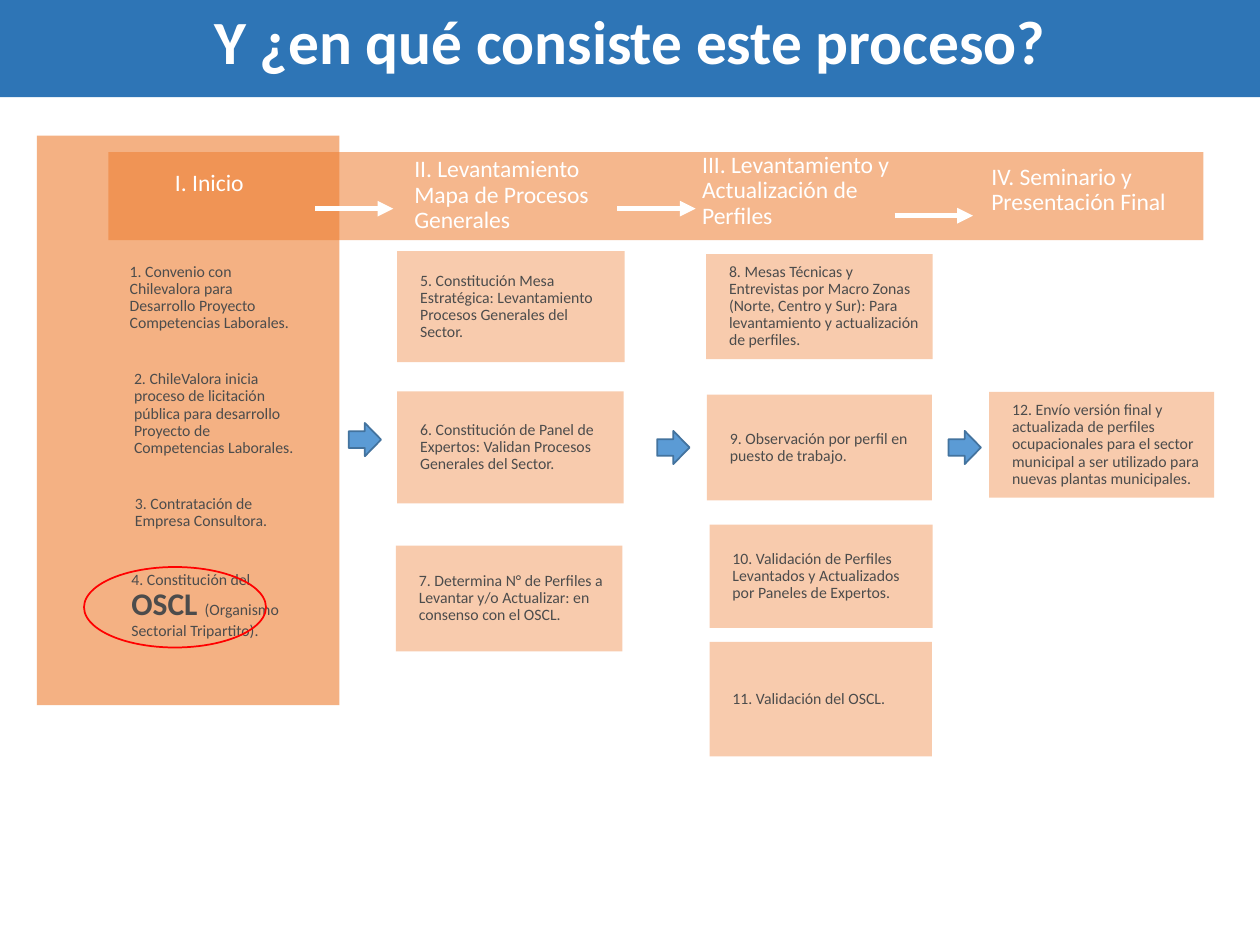
from lxml import etree
from pptx import Presentation
from pptx.dml.color import RGBColor
from pptx.enum.shapes import MSO_CONNECTOR, MSO_SHAPE
from pptx.enum.text import MSO_ANCHOR, MSO_AUTO_SIZE, PP_ALIGN
from pptx.oxml.ns import qn
from pptx.util import Pt

RECTANGLE, ARROW, ELLIPSE = MSO_SHAPE.RECTANGLE, MSO_SHAPE.RIGHT_ARROW, MSO_SHAPE.OVAL
STRAIGHT = MSO_CONNECTOR.STRAIGHT
TOP, MIDDLE = MSO_ANCHOR.TOP, MSO_ANCHOR.MIDDLE
LEFT, CENTER = PP_ALIGN.LEFT, PP_ALIGN.CENTER
NO_FIT = MSO_AUTO_SIZE.NONE

COLORS = {
    "title": "2E75B6", "panel": "F4B183", "band": "ED7D31", "step": "F8CBAD",
    "arrow": "5B9BD5", "arrow_line": "43739E", "mark": "FF0000",
    "white": "FFFFFF", "text": "4C4C4C",
}

# Content: every place is left, top, width, height in points
TITLE = "Y ¿en qué consiste este proceso?"
PHASES = [
    ("I. Inicio", (100, 98, 92, 14.5)),
    ("II. Levantamiento Mapa de Procesos Generales", (236.75, 90, 105, 44)),
    ("III. Levantamiento y Actualización de Perfiles", (401.25, 87.25, 108, 44)),
    ("IV. Seminario y Presentación Final", (566.5, 94.25, 118, 29.5)),
]
START_SIZE = (114.5, 38)
START_STEPS = [
    ("1. Convenio con Chilevalora para Desarrollo Proyecto Competencias Laborales.",
     (61, 151.25)),
    ("2. ChileValora inicia proceso de licitación pública para desarrollo "
     "Proyecto de Competencias Laborales.", (63.5, 217.5)),
    ("3. Contratación de Empresa Consultora.", (64, 274.25)),
    ([("4. Constitución del ", {}),
      ("OSCL ", {"size": Pt(18), "bold": True}),
      ("(Organismo Sectorial Tripartito).", {})], (62, 327)),
]
BOXED_STEPS = [
    ("5. Constitución Mesa Estratégica: Levantamiento Procesos Generales del Sector.",
     (227, 143.5, 130, 63.5)),
    ("6. Constitución de Panel de Expertos: Validan Procesos Generales del Sector.",
     (227, 223.75, 129.5, 64)),
    ("7. Determina N° de Perfiles a Levantar y/o Actualizar: en consenso con el OSCL.",
     (226.25, 311.75, 129.5, 60.5)),
    ("8. Mesas Técnicas y Entrevistas por Macro Zonas (Norte, Centro y Sur): Para "
     "levantamiento y actualización de perfiles.", (403.5, 145.25, 129.5, 60)),
    ("9. Observación por perfil en puesto de trabajo.", (404, 225.5, 128.5, 60.5)),
    ("10. Validación de Perfiles Levantados y Actualizados por Paneles de Expertos.",
     (405.5, 299.75, 127.5, 59)),
    ("11. Validación del OSCL.", (405.5, 366.75, 127, 65.5)),
    ("12. Envío versión final y actualizada de perfiles ocupacionales para el sector "
     "municipal a ser utilizado para nuevas plantas municipales.",
     (565.25, 224, 128.5, 60.5)),
]
PHASE_LINES = [(180, 119.25), (352.75, 119.25), (511.25, 123.25)]
LINE_LENGTH = 44.75
BLOCK_ARROWS = [(199.25, 241.75), (375.5, 246.25), (542, 246.25)]
ARROW_SIZE = (18.5, 19)


def color(name):
    return RGBColor.from_string(COLORS[name])


def place(values):
    return [Pt(value) for value in values]


def write(box, text, size, ink, anchor=MIDDLE, align=LEFT, indent=0, inset=None, bold=False):
    frame = box.text_frame
    settings = {"word_wrap": True, "auto_size": NO_FIT, "vertical_anchor": anchor}
    if inset is not None:
        for side in ("left", "top", "right", "bottom"):
            settings["margin_" + side] = Pt(inset)
    for name, value in settings.items():
        setattr(frame, name, value)
    para = frame.paragraphs[0]
    para.alignment, para.line_spacing, para.space_before = align, 0.9, Pt(0)
    if indent:
        properties = para._p.get_or_add_pPr()
        properties.set("marL", str(Pt(indent)))
        properties.set("indent", "0")
    for words, changes in [(text, {})] if isinstance(text, str) else text:
        span = para.add_run()
        span.text = words
        span.font.color.rgb = color(ink)
        font = {"name": "Calibri", "size": Pt(size), "bold": bold, **changes}
        for name, value in font.items():
            setattr(span.font, name, value)


def add_shape(page, kind, where, fill=None, line=None):
    shape = page.shapes.add_shape(kind, *place(where))
    shape.shadow.inherit = False
    if fill:
        shape.fill.solid()
        shape.fill.fore_color.rgb = color(fill)
    else:
        shape.fill.background()
    if line:
        shape.line.color.rgb = color(line)
        shape.line.width = Pt(1)
    else:
        shape.line.fill.background()
    return shape


def add_phase_line(page, left, top):
    line = page.shapes.add_connector(STRAIGHT, *place((left, top, left + LINE_LENGTH, top)))
    line.line.color.rgb = color("white")
    line.line.width = Pt(3)
    etree.SubElement(line.line._get_or_add_ln(), qn("a:tailEnd"), type="triangle")
    etree.SubElement(line._element.spPr, qn("a:effectLst"))


def main():
    deck = Presentation()
    deck.slide_width, deck.slide_height = Pt(720), Pt(540)
    page = deck.slides.add_slide(deck.slide_layouts[5])

    # Title bar
    title = page.shapes.title
    title.left, title.top, title.width, title.height = place((0, -5, 720, 60.5))
    title.fill.solid()
    title.fill.fore_color.rgb = color("title")
    write(title, TITLE, 35.1, "white", align=CENTER, bold=True)

    # Start panel and translucent phase band
    add_shape(page, RECTANGLE, (21, 77.5, 173, 325.5), "panel")
    band = add_shape(page, RECTANGLE, (62, 87, 625.75, 50.25), "band")
    tint = band._element.spPr.find(qn("a:solidFill"))[0]
    etree.SubElement(tint, qn("a:alpha"), val="55000")

    # Phase names
    for text, where in PHASES:
        write(page.shapes.add_textbox(*place(where)), text, 13.5, "white",
              anchor=TOP, inset=0)

    # Steps
    for text, corner in START_STEPS:
        box = page.shapes.add_textbox(*place(corner + START_SIZE))
        write(box, text, 9, "text", indent=6)
    for text, where in BOXED_STEPS:
        write(add_shape(page, RECTANGLE, where, "step"), text, 9, "text", indent=6)

    # Arrows between phases and columns
    for left, top in PHASE_LINES:
        add_phase_line(page, left, top)
    for corner in BLOCK_ARROWS:
        add_shape(page, ARROW, corner + ARROW_SIZE, "arrow", "arrow_line")

    # Ring around step 4
    add_shape(page, ELLIPSE, (48, 324, 104, 46), line="mark")

    deck.save("out.pptx")


if __name__ == "__main__":
    main()
